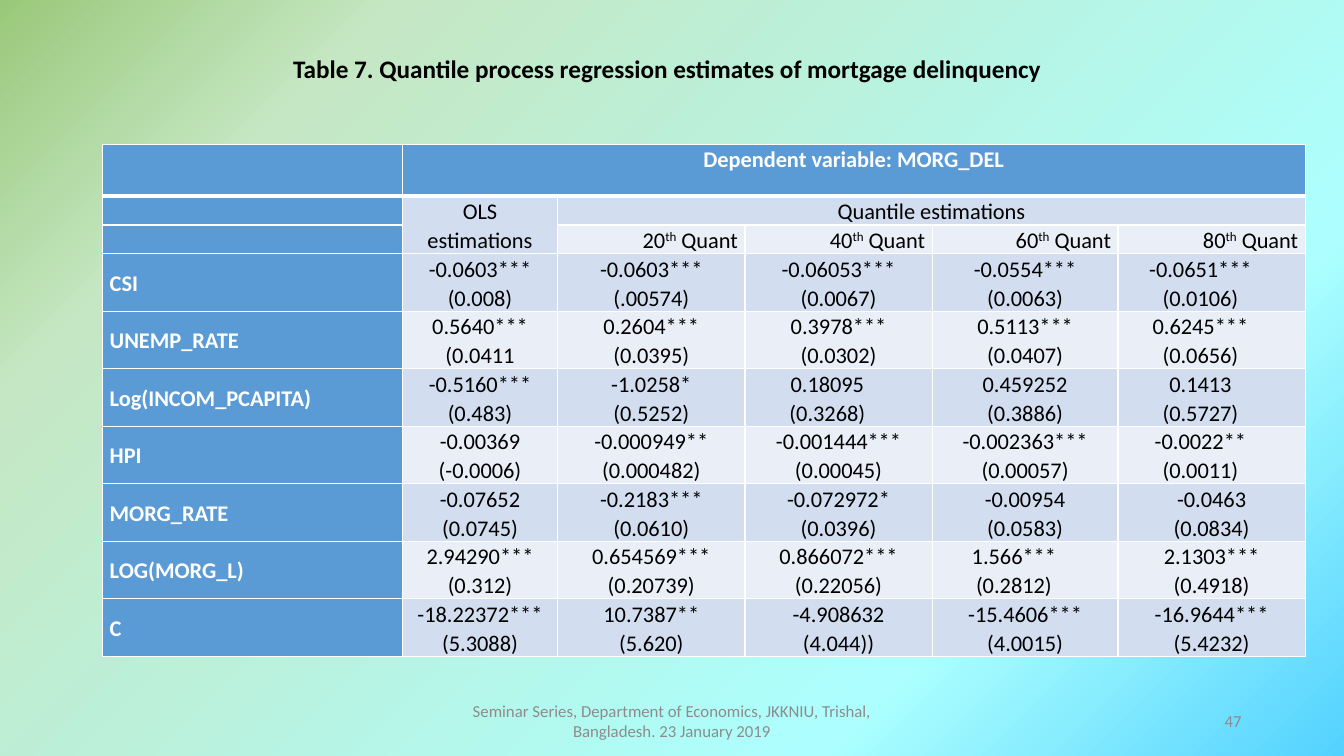
"""Build the slide with the quantile regression table."""
from lxml.etree import SubElement, fromstring
from pptx import Presentation
from pptx.dml.color import RGBColor
from pptx.enum.text import MSO_ANCHOR, MSO_AUTO_SIZE, PP_ALIGN
from pptx.oxml import parse_xml
from pptx.oxml.ns import nsdecls, qn
from pptx.util import Pt

TITLE = "Table 7. Quantile process regression estimates of mortgage delinquency"
FOOTER = "Seminar Series, Department of Economics, JKKNIU, Trishal, Bangladesh. 23 January 2019"
NUMBER = "47"
DEPENDENT = "Dependent variable: MORG_DEL"
OLS = "OLS estimations"
QUANTILE = "Quantile estimations"
QUANTILES = ["20", "40", "60", "80"]
ESTIMATES = [
    ("CSI", ["-0.0603*** (0.008)", "-0.0603*** (.00574)", "-0.06053*** (0.0067)",
             "-0.0554*** (0.0063)", "-0.0651*** (0.0106)"]),
    ("UNEMP_RATE", ["0.5640*** (0.0411", "0.2604*** (0.0395)", "0.3978*** (0.0302)",
                    "0.5113*** (0.0407)", "0.6245*** (0.0656)"]),
    ("Log(INCOM_PCAPITA)", ["-0.5160*** (0.483)", "-1.0258* (0.5252)", "0.18095 (0.3268)",
                            "0.459252 (0.3886)", "0.1413 (0.5727)"]),
    ("HPI", ["-0.00369 (-0.0006)", "-0.000949** (0.000482)", "-0.001444*** (0.00045)",
             "-0.002363*** (0.00057)", "-0.0022** (0.0011)"]),
    ("MORG_RATE", ["-0.07652 (0.0745)", "-0.2183*** (0.0610)", "-0.072972* (0.0396)",
                   "-0.00954 (0.0583)", "-0.0463 (0.0834)"]),
    ("LOG(MORG_L)", ["2.94290*** (0.312)", "0.654569*** (0.20739)", "0.866072*** (0.22056)",
                     "1.566*** (0.2812)", "2.1303*** (0.4918)"]),
    ("C", ["-18.22372*** (5.3088)", "10.7387** (5.620)", "-4.908632 (4.044))",
           "-15.4606*** (4.0015)", "-16.9644*** (5.4232)"]),
]
SHIFTED_LEFT = {("CSI", 5), ("UNEMP_RATE", 5), ("Log(INCOM_PCAPITA)", 5), ("HPI", 5),
                ("Log(INCOM_PCAPITA)", 3), ("LOG(MORG_L)", 4)}
GRADIENT = [(0, "53D2FF"), (25, "ACFFFE"), (81, "C5E7C3"), (100, "9AC87A"), (100, "CEE1F2")]
COLUMN_WIDTHS = [214, 111, 133.75, 133.75, 132.75, 133.75]
ROW_HEIGHTS = [37.2, 18, 18] + [36.8] * len(ESTIMATES)
HEADER, BANDS = "5B9BD5", ("D2DEEF", "EAEFF7")
WHITE, BLACK, GRAY = "FFFFFF", "000000", "8C8C8C"
LINE_SPACING = 1.07


def color(value):
    return RGBColor.from_string(value)


def add_span(para, text, size, tint, bold=False):
    span = para.add_run()
    span.text = text
    span.font.size = Pt(size)
    span.font.name = "Calibri"
    span.font.bold = bold
    span.font.color.rgb = color(tint)
    return span


def paint_background(slide):
    stops = "".join(f'<a:gs pos="{place * 1000}"><a:srgbClr val="{tint}"/></a:gs>'
                    for place, tint in GRADIENT)
    slide.background.fill.solid()
    properties = slide.element.find(".//" + qn("p:bgPr"))
    properties.replace(properties[0], parse_xml(
        f'<a:gradFill {nsdecls("a")} rotWithShape="1"><a:gsLst>{stops}</a:gsLst>'
        '<a:path path="circle"><a:fillToRect l="100000" t="100000"/></a:path>'
        '<a:tileRect r="-100000" b="-100000"/></a:gradFill>'))


def style_cell(cell, fill, bottom=1):
    cell.margin_left = cell.margin_right = Pt(5)
    cell.margin_top = cell.margin_bottom = 0
    cell.fill.solid()
    cell.fill.fore_color.rgb = color(fill)
    properties = cell.fill._xPr
    for index, side in enumerate("LRTB"):
        width = Pt(bottom if side == "B" else 1)
        properties.insert(index, fromstring(
            f'<a:ln{side} {nsdecls("a")} w="{width}"><a:solidFill>'
            f'<a:srgbClr val="{WHITE}"/></a:solidFill></a:ln{side}>'))


def write_cell(cell, lines, tint=BLACK, bold=False, align=PP_ALIGN.CENTER):
    frame = cell.text_frame
    for index, line in enumerate(lines):
        para = frame.add_paragraph() if index else frame.paragraphs[0]
        para.alignment = align
        para.line_spacing = LINE_SPACING
        for text, baseline in line:
            span = add_span(para, text, 16, tint, bold)
            if baseline:
                span.font._element.set("baseline", str(baseline))


def add_estimates(slide):
    frame = slide.shapes.add_table(len(ROW_HEIGHTS), len(COLUMN_WIDTHS), Pt(73.4), Pt(103),
                                   Pt(sum(COLUMN_WIDTHS)), Pt(365.8))
    table = frame.table
    for column, width in zip(table.columns, COLUMN_WIDTHS):
        column.width = Pt(width)
    for row, height in zip(table.rows, ROW_HEIGHTS):
        row.height = Pt(height)
    for row_index, row in enumerate(table.rows):
        for column_index, cell in enumerate(row.cells):
            is_header = row_index == 0 or column_index == 0
            style_cell(cell, HEADER if is_header else BANDS[(row_index - 1) % 2],
                       3 if row_index == 0 else 1)
    for row_index in range(3):
        para = table.cell(row_index, 0).text_frame.paragraphs[0]
        SubElement(para._p, qn("a:endParaRPr"), sz="1600")

    table.cell(0, 1).merge(table.cell(0, 5))
    table.cell(1, 1).merge(table.cell(2, 1))
    table.cell(1, 2).merge(table.cell(1, 5))
    write_cell(table.cell(0, 1), [[(DEPENDENT, 0)]], WHITE, True)
    write_cell(table.cell(1, 1), [[(OLS, 0)]])
    write_cell(table.cell(1, 2), [[(QUANTILE, 0)]])
    for column_index, quantile in enumerate(QUANTILES, 2):
        write_cell(table.cell(2, column_index),
                   [[(quantile, 0), ("th", 30000), (" Quant", 0)]], align=PP_ALIGN.RIGHT)
    for row_index, (variable, estimates) in enumerate(ESTIMATES, 3):
        name_cell = table.cell(row_index, 0)
        name_cell.vertical_anchor = MSO_ANCHOR.MIDDLE
        write_cell(name_cell, [[(variable, 0)]], WHITE, True, PP_ALIGN.LEFT)
        for column_index, estimate in enumerate(estimates, 1):
            cell = table.cell(row_index, column_index)
            cell.vertical_anchor = MSO_ANCHOR.MIDDLE
            if (variable, column_index) in SHIFTED_LEFT:
                cell.margin_right = Pt(21)
            write_cell(cell, [[(part, 0)] for part in estimate.split()])
    frame.height = Pt(365.8)


def add_title(slide):
    title = slide.shapes.title
    title.left, title.top, title.width, title.height = Pt(53.3), Pt(33.1), Pt(846.7), Pt(31)
    frame = title.text_frame
    frame.auto_size = MSO_AUTO_SIZE.NONE
    frame.word_wrap = True
    frame.vertical_anchor = MSO_ANCHOR.TOP
    para = frame.paragraphs[0]
    para.alignment = PP_ALIGN.CENTER
    para.line_spacing = LINE_SPACING
    para.space_before = Pt(0)
    para.space_after = Pt(8)
    add_span(para, TITLE, 18, BLACK, True)


def add_footer_text(slide, text, left, width, align):
    box = slide.shapes.add_textbox(Pt(left), Pt(500.5), Pt(width), Pt(28.8))
    frame = box.text_frame
    frame.word_wrap = True
    frame.vertical_anchor = MSO_ANCHOR.MIDDLE
    para = frame.paragraphs[0]
    para.alignment = align
    add_span(para, text, 12, GRAY)


def main():
    deck = Presentation()
    deck.slide_width, deck.slide_height = Pt(960), Pt(540)
    page = deck.slides.add_slide(deck.slide_layouts[5])
    paint_background(page)
    add_footer_text(page, FOOTER, 318, 324, PP_ALIGN.CENTER)
    add_estimates(page)
    add_title(page)
    add_footer_text(page, NUMBER, 678, 216, PP_ALIGN.RIGHT)
    deck.save("out.pptx")


if __name__ == "__main__":
    main()
